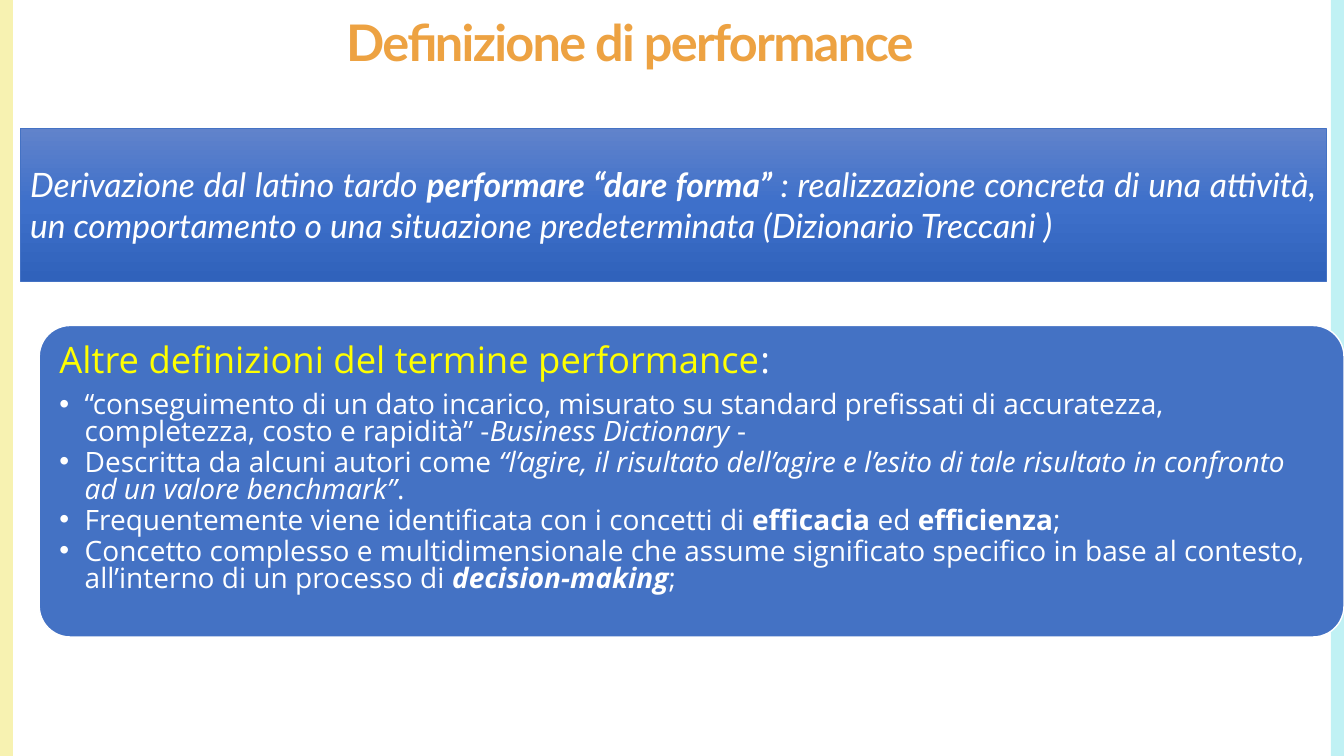
from copy import deepcopy

from lxml.etree import SubElement
from pptx import Presentation
from pptx.dml.color import RGBColor
from pptx.enum.shapes import MSO_SHAPE
from pptx.enum.text import MSO_ANCHOR, MSO_AUTO_SIZE, PP_ALIGN
from pptx.oxml.ns import qn
from pptx.util import Pt

WHITE = RGBColor(0xFF, 0xFF, 0xFF)
YELLOW = RGBColor(0xFF, 0xFF, 0x00)
ORANGE = RGBColor(0xED, 0xA2, 0x42)
BLUE = RGBColor(0x44, 0x72, 0xC4)
PALE_YELLOW = RGBColor(0xF7, 0xF2, 0xB1)
PALE_CYAN = RGBColor(0xC0, 0xF1, 0xF4)
BAND_GRADIENT = [
    (0, RGBColor(0x61, 0x83, 0xCB)),
    (0.5, RGBColor(0x3E, 0x70, 0xCA)),
    (1, RGBColor(0x30, 0x62, 0xBB)),
]

SLIDE_WIDTH, SLIDE_HEIGHT = 960, 540
STRIPE_WIDTH = 9.3
CARD_PADDING = 6.5

ITALIC = {"italic": True}
BOLD = {"bold": True}
BOLD_ITALIC = {"bold": True, "italic": True}

ETYMOLOGY = [
    ("Derivazione dal latino tardo ", ITALIC),
    ("performare “dare forma” ", BOLD_ITALIC),
    (": realizzazione concreta di una attività, un comportamento o una "
     "situazione predeterminata (Dizionario Treccani )", ITALIC),
]
HEADING = [
    ("Altre definizioni del termine performance", {"color": YELLOW}),
    (":", {}),
]
DEFINITIONS = [
    [("“conseguimento di un dato incarico, misurato su standard prefissati di "
      "accuratezza, completezza, costo e rapidità” -", {}),
     ("Business Dictionary ", ITALIC), ("-", {})],
    [("Descritta da alcuni autori come ", {}),
     ("“l’agire, il risultato dell’agire e l’esito di tale risultato in "
      "confronto ad un valore benchmark”", ITALIC), (".", {})],
    [("Frequentemente viene identificata con i concetti di ", {}),
     ("efficacia", BOLD), (" ed ", {}), ("efficienza", BOLD), (";", {})],
    [("Concetto complesso e multidimensionale che assume significato specifico "
      "in base al contesto, all’interno di un processo di ", {}),
     ("decision-making", BOLD_ITALIC), (";", {})],
]


def set_attributes(target, values):
    """Set every attribute named in values on target."""
    for name, value in values.items():
        setattr(target, name, value)


def place(shape, box):
    """Move and size a shape to a box given in points."""
    sides = ("left", "top", "width", "height")
    set_attributes(shape, dict(zip(sides, map(Pt, box))))


def add_panel(slide, preset, box, fill=None, line=None, line_width=0):
    """Add a shadowless preset shape with optional solid fill and outline."""
    panel = slide.shapes.add_shape(preset, *map(Pt, box))
    panel.shadow.inherit = False
    if fill is not None:
        panel.fill.solid()
        panel.fill.fore_color.rgb = fill
    if line is None:
        panel.line.fill.background()
    else:
        panel.line.color.rgb = line
        panel.line.width = Pt(line_width)
    return panel


def write_runs(paragraph, runs, base):
    """Write text runs, each overriding the base format."""
    for text, changes in runs:
        run = paragraph.add_run()
        run.text = text
        values = {"bold": False, "italic": False, **base, **changes}
        run.font.color.rgb = values.pop("color")
        set_attributes(run.font, values)


def set_bullet(paragraph, indent, mark=None):
    """Give a paragraph a hanging bullet, or none when mark is missing."""
    properties = paragraph._p.get_or_add_pPr()
    properties.set("marL", str(Pt(indent)))
    properties.set("indent", str(-Pt(indent)))
    if mark:
        SubElement(properties, qn("a:buChar")).set("char", mark)
    else:
        SubElement(properties, qn("a:buNone"))


def build_stripes(slide, box):
    """Draw the coloured stripes along both sides of the box."""
    left, top, width, height = box
    right = left + width - STRIPE_WIDTH
    for start, color in ((left, PALE_YELLOW), (right, PALE_CYAN)):
        add_panel(slide, MSO_SHAPE.RECTANGLE, (start, top, STRIPE_WIDTH, height), color)


def build_title(slide, box):
    """Place the slide title."""
    title = slide.shapes.title
    place(title, box)
    set_attributes(title.text_frame, {
        "word_wrap": True, "auto_size": MSO_AUTO_SIZE.NONE,
        "vertical_anchor": MSO_ANCHOR.MIDDLE})
    paragraph = title.text_frame.paragraphs[0]
    set_attributes(paragraph, {"alignment": PP_ALIGN.CENTER, "line_spacing": 0.9})
    write_runs(paragraph, [("Definizione di performance", BOLD)],
               {"name": "Lato", "size": Pt(36), "color": ORANGE})
    paragraph.runs[0]._r.get_or_add_rPr().set("spc", "-120")


def build_etymology(slide, box):
    """Draw the gradient band with the origin of the word."""
    band = add_panel(slide, MSO_SHAPE.RECTANGLE, box, line=BLUE, line_width=0.5)
    band.fill.gradient()
    band.fill.gradient_angle = 270
    stop_list = band._element.spPr.find(qn("a:gradFill")).find(qn("a:gsLst"))
    stop_list.append(deepcopy(stop_list[0]))
    for stop, (position, color) in zip(band.fill.gradient_stops, BAND_GRADIENT):
        stop.position = position
        stop.color.rgb = color
    set_attributes(band.text_frame, {
        "word_wrap": True, "vertical_anchor": MSO_ANCHOR.MIDDLE})
    paragraph = band.text_frame.paragraphs[0]
    paragraph.alignment = PP_ALIGN.JUSTIFY
    write_runs(paragraph, ETYMOLOGY,
               {"name": "Lato", "size": Pt(24), "color": WHITE})


def build_definitions(slide, box):
    """Draw the rounded card and lay the list of definitions on it."""
    card = add_panel(slide, MSO_SHAPE.ROUNDED_RECTANGLE, box, BLUE, WHITE, 1)
    card.adjustments[0] = 0.1
    left, top, width, height = box
    body = slide.placeholders[1]
    place(body, (left + CARD_PADDING, top + CARD_PADDING,
                 width - 2 * CARD_PADDING, height - 2 * CARD_PADDING))
    card._element.addnext(body._element)
    frame = body.text_frame
    margins = ("margin_left", "margin_top", "margin_right", "margin_bottom")
    set_attributes(frame, {
        "word_wrap": True, "auto_size": MSO_AUTO_SIZE.NONE,
        "vertical_anchor": MSO_ANCHOR.TOP, **dict.fromkeys(margins, Pt(8))})
    rows = [(HEADING, 26, 9.1, 0, None)]
    rows += [(definition, 20, 2.8, 18, "•") for definition in DEFINITIONS]
    for index, (runs, size, gap, indent, mark) in enumerate(rows):
        paragraph = frame.add_paragraph() if index else frame.paragraphs[0]
        set_bullet(paragraph, indent, mark)
        set_attributes(paragraph, {
            "alignment": PP_ALIGN.LEFT, "line_spacing": 0.8,
            "space_before": Pt(0), "space_after": Pt(gap)})
        write_runs(paragraph, runs,
                   {"name": "Open Sans", "size": Pt(size), "color": WHITE})


def main():
    """Build the slide and save it."""
    deck = Presentation()
    set_attributes(deck, {
        "slide_width": Pt(SLIDE_WIDTH), "slide_height": Pt(SLIDE_HEIGHT)})
    slide = deck.slides.add_slide(deck.slide_layouts[1])
    build_stripes(slide, (0, 0, SLIDE_WIDTH, SLIDE_HEIGHT))
    build_etymology(slide, (14.4, 91.4, 933, 109.4))
    build_title(slide, (25.2, 4.3, 849.6, 55.4))
    build_definitions(slide, (28, 232.5, 932, 222.5))
    deck.save("out.pptx")


if __name__ == "__main__":
    main()
